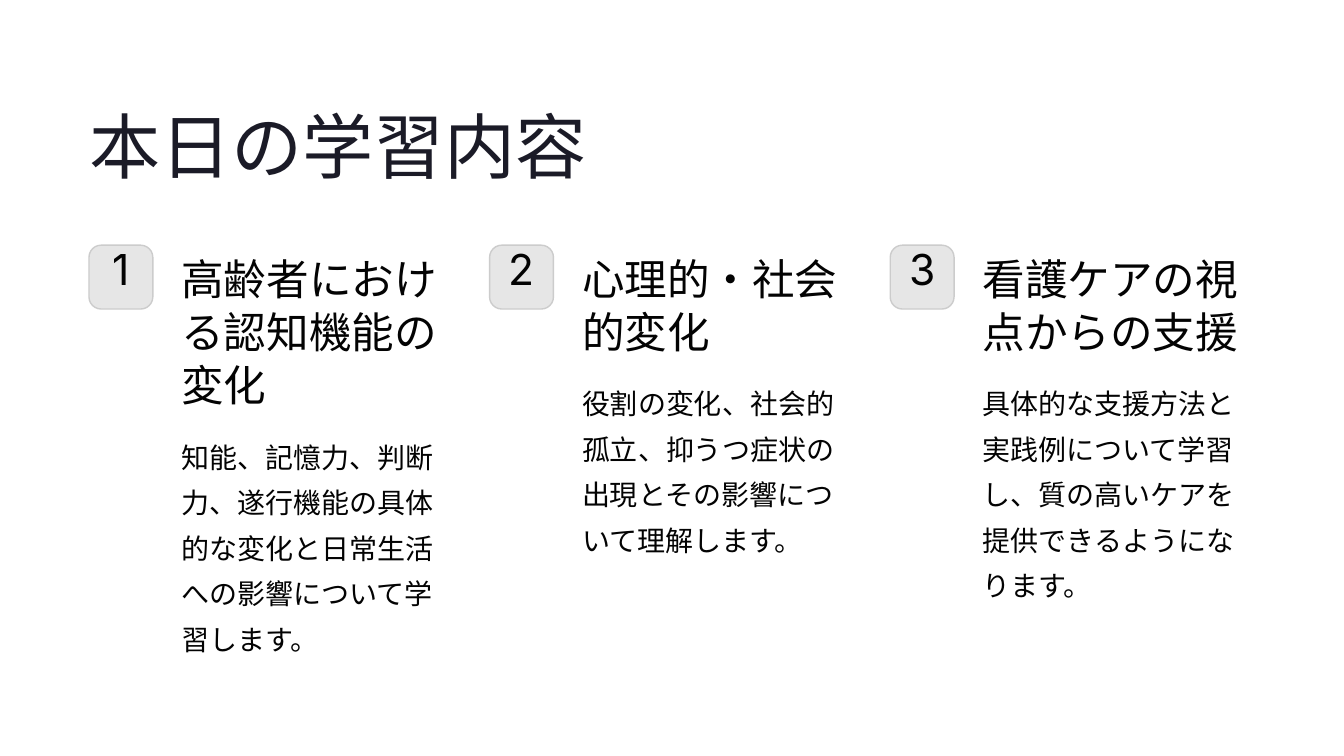
from pptx import Presentation
from pptx.dml.color import RGBColor
from pptx.enum.shapes import MSO_SHAPE as Shape
from pptx.enum.text import PP_ALIGN as Align
from pptx.util import Pt

INK = "030303"
LEFT, TOP, STEP = 76.3, 215.3, 343.4
BADGE = 54.7
HEAD_ROW, BODY_ROW, GAP = 45.9, 39.15, 14.1

# Each topic: heading, its line count, body, its line count
TOPICS = [
    ("高齢者における認知機能の変化", 3,
     "知能、記憶力、判断力、遂行機能の具体的な変化と日常生活への影響について学習します。", 5),
    ("心理的・社会的変化", 2,
     "役割の変化、社会的孤立、抑うつ症状の出現とその影響について理解します。", 4),
    ("看護ケアの視点からの支援", 2,
     "具体的な支援方法と実践例について学習し、質の高いケアを提供できるようになります。", 5),
]


def color(code):
    return RGBColor.from_string(code)


def add_text(slide, text, box, size, lead, font="Inter", ink=INK,
             align=Align.LEFT, wrap=True):
    """Add a text box without insets; lead is the line pitch in points."""
    frame = slide.shapes.add_textbox(*map(Pt, box)).text_frame
    frame.margin_left = frame.margin_right = 0
    frame.margin_top = frame.margin_bottom = 0
    frame.word_wrap = wrap
    para = frame.paragraphs[0]
    para.alignment = align
    para.line_spacing = Pt(lead)
    run = para.add_run()
    run.text = text
    run.font.name = font
    run.font.size = Pt(size)
    run.font.color.rgb = color(ink)


def add_badge(slide, left, number):
    tile = slide.shapes.add_shape(Shape.ROUNDED_RECTANGLE, Pt(left), Pt(210.2),
                                  Pt(BADGE), Pt(BADGE))
    tile.adjustments[0] = 0.19
    tile.shadow.inherit = False
    tile.fill.solid()
    tile.fill.fore_color.rgb = color("E6E6E6")
    tile.line.color.rgb = color("CCCCCC")
    tile.line.width = Pt(1.2)
    add_text(slide, str(number), (left + 9, TOP, BADGE - 18, 46), 36.5, 36.5,
             align=Align.CENTER, wrap=False)


def add_topic(slide, index, head, head_rows, body, body_rows):
    left = LEFT + index * STEP
    add_badge(slide, left, index + 1)
    text_left, width = left + 79.2, 233.3
    height = head_rows * HEAD_ROW
    add_text(slide, head, (text_left, TOP, width, height), 36.5, 45.5)
    add_text(slide, body,
             (text_left, TOP + height + GAP, width, body_rows * BODY_ROW),
             24, 39, font="Lato")


def main():
    deck = Presentation()
    deck.slide_width, deck.slide_height = Pt(1152), Pt(648)
    slide = deck.slides.add_slide(deck.slide_layouts[6])
    add_text(slide, "本日の学習内容", (LEFT, 85, 611.3, 76.3), 61, 76,
             ink="1B1B27", wrap=False)
    for index, topic in enumerate(TOPICS):
        add_topic(slide, index, *topic)
    deck.save("out.pptx")


if __name__ == "__main__":
    main()
